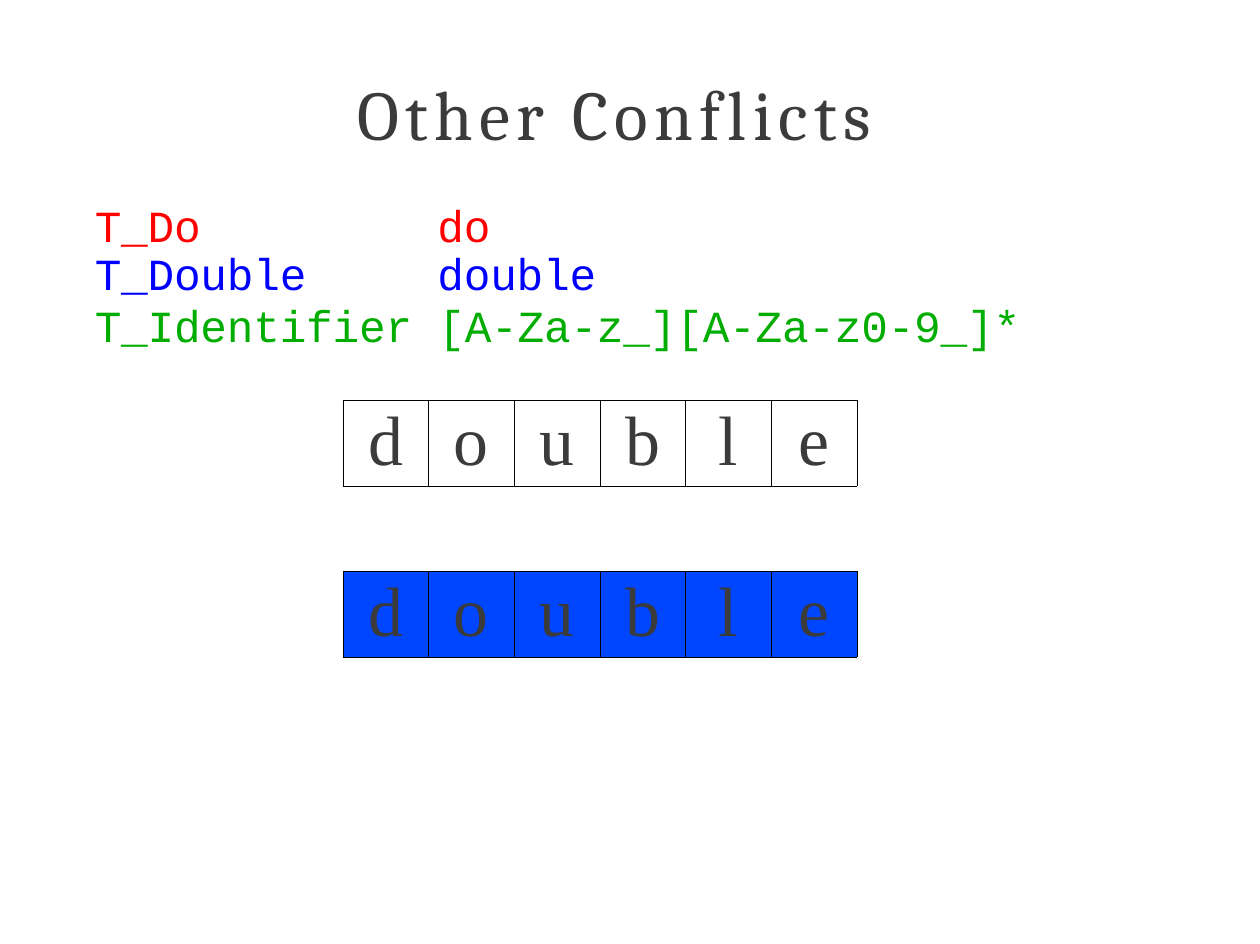
from dataclasses import dataclass

from lxml import etree
from pptx import Presentation
from pptx.dml.color import RGBColor
from pptx.enum.text import MSO_ANCHOR, MSO_AUTO_SIZE, PP_ALIGN
from pptx.oxml.ns import qn
from pptx.util import Inches, Pt

LEFT, CENTER = PP_ALIGN.LEFT, PP_ALIGN.CENTER
TOP, NO_AUTOFIT = MSO_ANCHOR.TOP, MSO_AUTO_SIZE.NONE
TITLE_ONLY = 5


@dataclass(frozen=True)
class Theme:
    title_font: str = "Cambria"
    code_font: str = "Courier New"
    letter_font: str = "Times New Roman"
    large: float = 44
    code: float = 28
    code_line: float = 32.6
    letter_line: float = 50.6
    ink: str = "3B3B3B"
    border: str = "000000"
    do: str = "FF0000"
    double: str = "0000FF"
    identifier: str = "00AD00"
    match: str = "0046FF"


THEME = Theme()

# Grid in inches
CODE_LEFT = 0.83
PATTERN_OFFSET = 3
CELL = 0.75
WORD_LEFT = 4 * CELL
WORD_TOPS = (3.5, 5)


def format_paragraph(paragraph, font, size, color, tracking=0):
    for run in paragraph.runs:
        run.font.name = font
        run.font.size = Pt(size)
        run.font.color.rgb = RGBColor.from_string(color)
        if tracking:
            run._r.get_or_add_rPr().set("spc", str(round(tracking * 100)))


def prepare_frame(text_frame):
    text_frame.word_wrap = True
    text_frame.auto_size = NO_AUTOFIT
    text_frame.vertical_anchor = TOP
    text_frame.margin_left = text_frame.margin_right = text_frame.margin_bottom = 0
    text_frame.margin_top = Inches(0.01)


def add_title(slide, text, box):
    title = slide.shapes.title
    title.left, title.top, title.width, title.height = map(Inches, box)
    prepare_frame(title.text_frame)
    title.text_frame.text = text
    paragraph = title.text_frame.paragraphs[0]
    paragraph.alignment = LEFT
    paragraph.space_before = Pt(1)
    format_paragraph(paragraph, THEME.title_font, THEME.large, THEME.ink, 4)


def add_code(slide, lines, box, line_spacing=None):
    """Write (text, color) lines of code, with patterns at a shared tab stop."""
    text_frame = slide.shapes.add_textbox(*map(Inches, box)).text_frame
    prepare_frame(text_frame)
    text_frame.text = "\n".join(text for text, _ in lines)
    text_frame.paragraphs[0].space_before = Pt(1)
    for paragraph, (text, color) in zip(text_frame.paragraphs, lines):
        if line_spacing:
            paragraph.line_spacing = Pt(line_spacing)
        if "\t" in text:
            tabs = etree.SubElement(paragraph._p.get_or_add_pPr(), qn("a:tabLst"))
            etree.SubElement(tabs, qn("a:tab"), pos=str(Inches(PATTERN_OFFSET)), algn="l")
        format_paragraph(paragraph, THEME.code_font, THEME.code, color, -0.1)


def add_token_rules(slide, left, top):
    # The keyword "do" and its pattern
    for text, offset, width in (("T_Do", 0, 0.96), ("do", PATTERN_OFFSET, 0.5)):
        add_code(slide, [(text, THEME.do)], (left + offset, top, width, 0.49))
    # The two longer rules
    rules = [
        ("T_Double\tdouble", THEME.double),
        ("T_Identifier [A-Za-z_][A-Za-z0-9_]*", THEME.identifier),
    ]
    add_code(slide, rules, (left, top + 0.44, 8.16, 0.93), THEME.code_line)


def add_borders(cell):
    properties = cell._tc.get_or_add_tcPr()
    for side in ("lnL", "lnR", "lnT", "lnB"):
        line = etree.SubElement(properties, qn(f"a:{side}"), w=str(Pt(0.25)))
        fill = etree.SubElement(line, qn("a:solidFill"))
        etree.SubElement(fill, qn("a:srgbClr"), val=THEME.border)


def add_word(slide, word, left, top, fill=None):
    """Spell a word in a row of square cells."""
    box = (left, top, len(word) * CELL, CELL)
    table = slide.shapes.add_table(1, len(word), *map(Inches, box)).table
    table.first_row = table.horz_banding = False
    for column, letter in enumerate(word):
        cell = table.cell(0, column)
        cell.margin_left = cell.margin_right = cell.margin_top = cell.margin_bottom = 0
        add_borders(cell)
        if fill:
            cell.fill.solid()
            cell.fill.fore_color.rgb = RGBColor.from_string(fill)
        else:
            cell.fill.background()
        cell.text_frame.text = letter
        paragraph = cell.text_frame.paragraphs[0]
        paragraph.alignment = CENTER
        paragraph.line_spacing = Pt(THEME.letter_line)
        format_paragraph(paragraph, THEME.letter_font, THEME.large, THEME.ink)


def main():
    presentation = Presentation()
    presentation.slide_width = Inches(11.03)
    presentation.slide_height = Inches(8.26)
    slide = presentation.slides.add_slide(presentation.slide_layouts[TITLE_ONLY])

    add_title(slide, "Other Conflicts", (3.13, 0.61, 4.76, 0.76))
    add_token_rules(slide, CODE_LEFT, 1.72)
    # Input, then the input matched as one token
    for top, fill in zip(WORD_TOPS, (None, THEME.match)):
        add_word(slide, "double", WORD_LEFT, top, fill)

    presentation.save("out.pptx")


if __name__ == "__main__":
    main()
